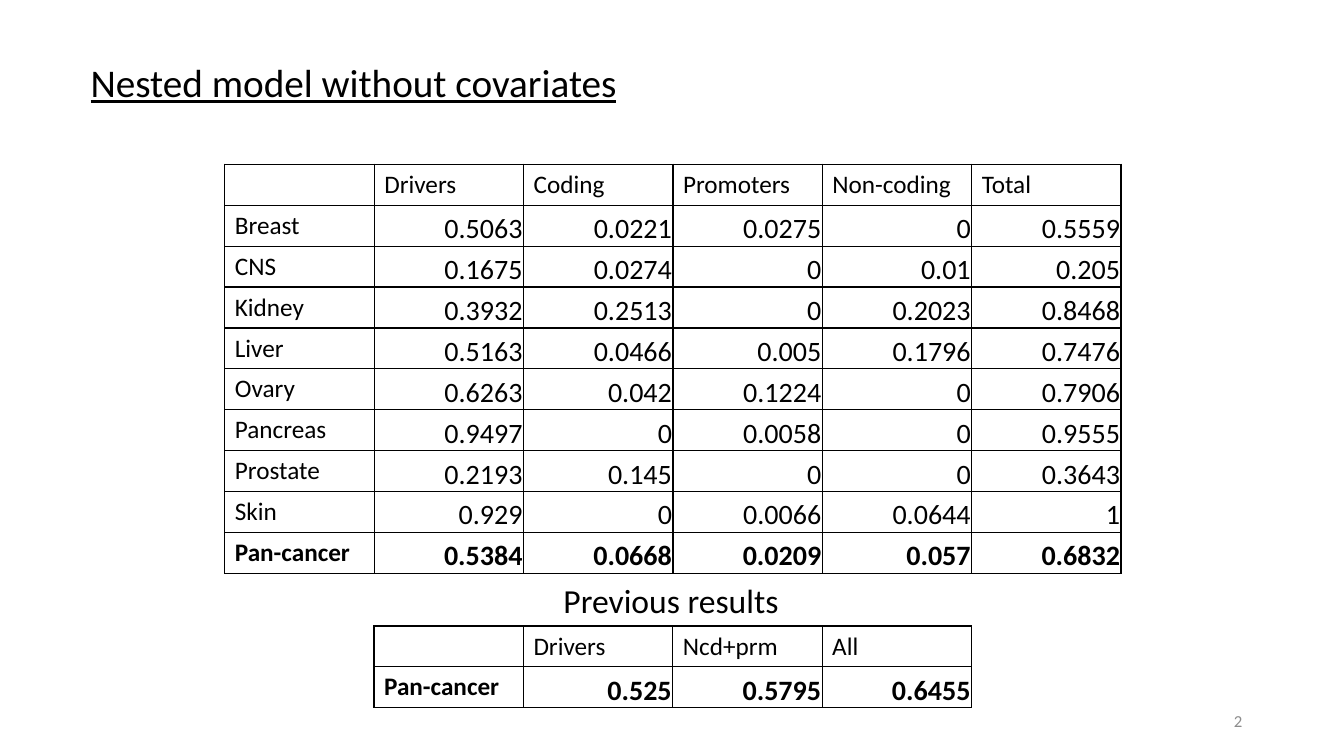
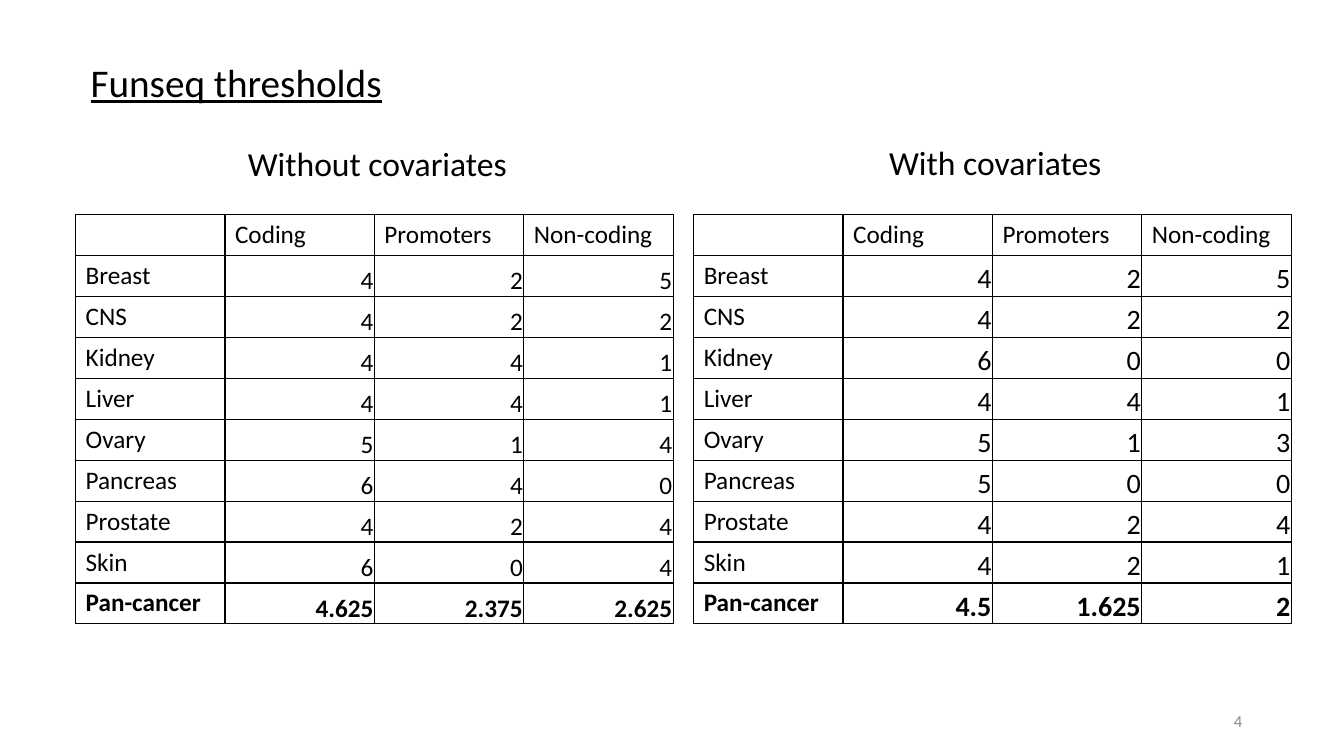
from dataclasses import dataclass

from lxml import etree
from pptx import Presentation
from pptx import util as u
from pptx.dml.color import RGBColor
from pptx.enum import text
from pptx.oxml import ns


@dataclass(frozen=True)
class Theme:
    font: str = "Calibri"
    ink: str = "000000"
    muted: str = "8C8C8C"
    title: int = 28
    caption: int = 24
    value: int = 20
    label: int = 18
    footer: int = 12
    border: int = 1


THEME = Theme()
COLUMN_WIDTH = 8.89 / 6
ROW_HEIGHT = 4.06 / 10
TOTAL_LABEL = "Pan-cancer"
TISSUES = ["Breast", "CNS", "Kidney", "Liver", "Ovary", "Pancreas", "Prostate", "Skin", TOTAL_LABEL]
THRESHOLD_HEADER = ["Coding", "Promoters", "Non-coding"]

SLIDES = [
    {
        "title": "Nested model without covariates",
        "number": 2,
        "captions": [("Previous results", 5.49, 5.7, 2.36)],
        "tables": [
            {
                "at": (2.23, 1.63),
                "header": ["Drivers", "Coding", "Promoters", "Non-coding", "Total"],
                "labels": TISSUES,
                "values": [
                    (0.5063, 0.0221, 0.0275, 0, 0.5559),
                    (0.1675, 0.0274, 0, 0.01, 0.205),
                    (0.3932, 0.2513, 0, 0.2023, 0.8468),
                    (0.5163, 0.0466, 0.005, 0.1796, 0.7476),
                    (0.6263, 0.042, 0.1224, 0, 0.7906),
                    (0.9497, 0, 0.0058, 0, 0.9555),
                    (0.2193, 0.145, 0, 0, 0.3643),
                    (0.929, 0, 0.0066, 0.0644, 1),
                    (0.5384, 0.0668, 0.0209, 0.057, 0.6832),
                ],
                "size": THEME.value,
            },
            {
                "at": (3.71, 6.21),
                "header": ["Drivers", "Ncd+prm", "All"],
                "labels": [TOTAL_LABEL],
                "values": [(0.525, 0.5795, 0.6455)],
                "size": THEME.value,
            },
        ],
    },
    {
        "title": "Funseq thresholds",
        "number": 4,
        "captions": [("Without covariates", 2.36, 1.37, 2.8), ("With covariates", 8.72, 1.36, 2.33)],
        "tables": [
            {
                "at": (0.75, 2.13),
                "header": THRESHOLD_HEADER,
                "labels": TISSUES,
                "values": [
                    (4, 2, 5), (4, 2, 2), (4, 4, 1), (4, 4, 1), (5, 1, 4),
                    (6, 4, 0), (4, 2, 4), (6, 0, 4), (4.625, 2.375, 2.625),
                ],
                "size": THEME.label,
            },
            {
                "at": (6.88, 2.13),
                "header": THRESHOLD_HEADER,
                "labels": TISSUES,
                "values": [
                    (4, 2, 5), (4, 2, 2), (6, 0, 0), (4, 4, 1), (5, 1, 3),
                    (5, 0, 0), (4, 2, 4), (4, 2, 1), (4.5, 1.625, 2),
                ],
                "size": THEME.value,
            },
        ],
    },
]


def style(paragraph, size, color=THEME.ink, bold=False, underline=False):
    font = paragraph.font
    font.name = THEME.font
    font.size = u.Pt(size)
    font.bold = bold
    font.underline = underline
    font.color.rgb = RGBColor.from_string(color)


def add_text(slide, content, box, size, wrap=True, grow=True, **look):
    frame = slide.shapes.add_textbox(*map(u.Inches, box)).text_frame
    frame.word_wrap = wrap
    if grow:
        frame.auto_size = text.MSO_AUTO_SIZE.SHAPE_TO_FIT_TEXT
    paragraph = frame.paragraphs[0]
    paragraph.text = content
    style(paragraph, size, **look)
    return frame


def add_borders(cell):
    properties = cell._tc.get_or_add_tcPr()
    for index, side in enumerate(("lnL", "lnR", "lnT", "lnB")):
        line = etree.Element(ns.qn(f"a:{side}"), w=str(u.Pt(THEME.border)))
        fill = etree.SubElement(line, ns.qn("a:solidFill"))
        etree.SubElement(fill, ns.qn("a:srgbClr"), val=THEME.ink)
        properties.insert(index, line)


def add_data_table(slide, data):
    rows = [["", *data["header"]]]
    rows += [[label, *values] for label, values in zip(data["labels"], data["values"])]
    row_count, column_count = len(rows), len(rows[0])
    size = (column_count * COLUMN_WIDTH, row_count * ROW_HEIGHT)
    table = slide.shapes.add_table(row_count, column_count, *map(u.Inches, data["at"] + size)).table
    table.first_row = False
    table.horz_banding = False
    for row_index, row in enumerate(rows):
        for column_index, content in enumerate(row):
            cell = table.cell(row_index, column_index)
            cell.fill.background()
            add_borders(cell)
            paragraph = cell.text_frame.paragraphs[0]
            paragraph.text = str(content)
            is_value = row_index > 0 and column_index > 0
            if is_value:
                cell.vertical_anchor = text.MSO_ANCHOR.BOTTOM
                cell.margin_left = cell.margin_right = cell.margin_top = u.Inches(0.01)
                cell.margin_bottom = 0
                paragraph.alignment = text.PP_ALIGN.RIGHT
            style(paragraph, data["size"] if is_value else THEME.label, bold=row[0] == TOTAL_LABEL)


def add_slide(presentation, content):
    slide = presentation.slides.add_slide(presentation.slide_layouts[6])
    add_text(slide, content["title"], (0.8, 0.53, 5.88, 0.57), THEME.title, underline=True)
    for data in content["tables"]:
        add_data_table(slide, data)
    for caption, left, top, width in content["captions"]:
        add_text(slide, caption, (left, top, width, 0.5), THEME.caption, wrap=False)
    footer = add_text(slide, str(content["number"]), (9.42, 6.95, 3, 0.4), THEME.footer,
                      grow=False, color=THEME.muted)
    footer.vertical_anchor = text.MSO_ANCHOR.MIDDLE
    footer.paragraphs[0].alignment = text.PP_ALIGN.RIGHT


def main():
    presentation = Presentation()
    presentation.slide_width = u.Inches(13.33)
    presentation.slide_height = u.Inches(7.5)
    for content in SLIDES:
        add_slide(presentation, content)
    presentation.save("out.pptx")


if __name__ == "__main__":
    main()
